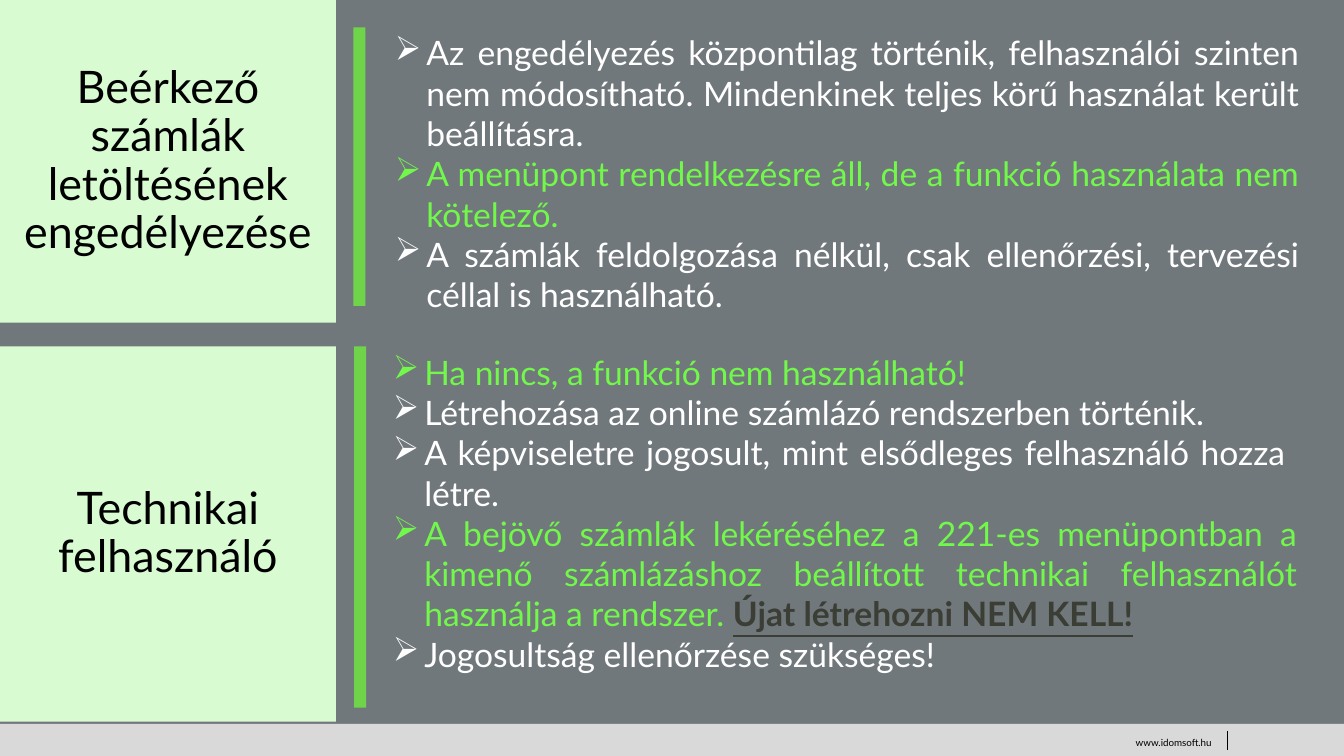
from lxml import etree
from pptx import Presentation
from pptx.dml.color import RGBColor
from pptx.enum.shapes import MSO_CONNECTOR, MSO_SHAPE
from pptx.enum.text import MSO_ANCHOR, MSO_AUTO_SIZE, PP_ALIGN
from pptx.oxml.ns import qn
from pptx.util import Pt

RECT = MSO_SHAPE.RECTANGLE
LINE = MSO_CONNECTOR.STRAIGHT
MIDDLE = MSO_ANCHOR.MIDDLE
NO_FIT = MSO_AUTO_SIZE.NONE
CENTER, RIGHT, JUSTIFY = PP_ALIGN.CENTER, PP_ALIGN.RIGHT, PP_ALIGN.JUSTIFY

FONT = "Lato"
COLORS = {
    "back": "71787C", "strip": "D9D9D9", "panel": "D8FBD2", "bar": "70D44B",
    "white": "FFFFFF", "lime": "72F84B", "dark": "3B3E35", "black": "000000",
}
INDENT = 22.5

RULES = [
    ("white", "Az engedélyezés központilag történik, felhasználói szinten nem "
              "módosítható. Mindenkinek teljes körű használat került beállításra."),
    ("lime", "A menüpont rendelkezésre áll, de a funkció használata nem kötelező."),
    ("white", "A számlák feldolgozása nélkül, csak ellenőrzési, tervezési "
              "céllal is használható."),
]
USERS = [
    ("lime", "Ha nincs, a funkció nem használható!"),
    ("white", "Létrehozása az online számlázó rendszerben történik."),
    ("white", "A képviseletre jogosult, mint elsődleges felhasználó hozza  létre."),
    ("lime", "A bejövő számlák lekéréséhez a 221-es menüpontban a kimenő "
             "számlázáshoz beállított technikai felhasználót használja a rendszer. ",
     "Újat létrehozni NEM KELL!"),
    ("white", "Jogosultság ellenőrzése szükséges!"),
]


def color(name):
    return RGBColor.from_string(COLORS[name])


def paint(shape, fill):
    shape.fill.solid()
    shape.fill.fore_color.rgb = color(fill)
    shape.line.fill.background()


def place(shape, box):
    shape.left, shape.top, shape.width, shape.height = map(Pt, box)


def style(para, size, ink, align):
    para.alignment = align
    para.font.name = FONT
    para.font.size = Pt(size)
    para.font.color.rgb = color(ink)


def add_rect(slide, box, fill):
    shape = slide.shapes.add_shape(RECT, *map(Pt, box))
    shape.shadow.inherit = False
    paint(shape, fill)
    return shape


def add_text(slide, box):
    frame = slide.shapes.add_textbox(*map(Pt, box)).text_frame
    frame.word_wrap = True
    return frame


def fill_panel(shape, text):
    paint(shape, "panel")
    frame = shape.text_frame
    frame.text = text
    frame.word_wrap = True
    frame.auto_size = NO_FIT
    frame.vertical_anchor = MIDDLE
    para = frame.paragraphs[0]
    para.line_spacing = 0.9
    style(para, 32, "black", CENTER)


def add_bullet(para):
    props = para._p.get_or_add_pPr()
    props.set("marL", str(Pt(INDENT)))
    props.set("indent", str(-Pt(INDENT)))
    etree.SubElement(props, qn("a:buChar")).set("char", "➢")


def add_list(slide, box, items):
    frame = add_text(slide, box)
    for index, (ink, text, *strong) in enumerate(items):
        para = frame.add_paragraph() if index else frame.paragraphs[0]
        add_bullet(para)
        style(para, 24, ink, JUSTIFY)
        para.add_run().text = text
        for part in strong:
            run = para.add_run()
            run.text = part
            run.font.bold = True
            run.font.underline = True
            run.font.color.rgb = color("dark")


def add_footer(slide):
    add_rect(slide, (0, 517, 960, 23), "strip")
    para = add_text(slide, (774, 522.5, 98.5, 16)).paragraphs[0]
    para.text = "www.idomsoft.hu"
    style(para, 7, "black", RIGHT)
    rule = slide.shapes.add_connector(LINE, Pt(877), Pt(522), Pt(877), Pt(535.5))
    rule.line.color.rgb = color("black")
    rule.line.width = Pt(0.75)
    etree.SubElement(rule._element.spPr, qn("a:effectLst"))


def main():
    deck = Presentation()
    deck.slide_width, deck.slide_height = Pt(960), Pt(540)
    slide = deck.slides.add_slide(deck.slide_layouts[5])
    slide.background.fill.solid()
    slide.background.fill.fore_color.rgb = color("back")

    add_footer(slide)
    title = slide.shapes.title
    place(title, (0, 0, 240, 230.5))
    fill_panel(title, "Beérkező számlák letöltésének engedélyezése")
    add_rect(slide, (252.5, 19.5, 8.5, 199), "bar")
    add_list(slide, (275, 19.5, 660, 211), RULES)

    panel = add_rect(slide, (0, 247.5, 240, 268), "panel")
    fill_panel(panel, "Technikai felhasználó")
    add_rect(slide, (253, 247.5, 8.5, 258), "bar")
    add_list(slide, (273.5, 247.5, 660, 240), USERS)
    deck.save("out.pptx")


if __name__ == "__main__":
    main()
